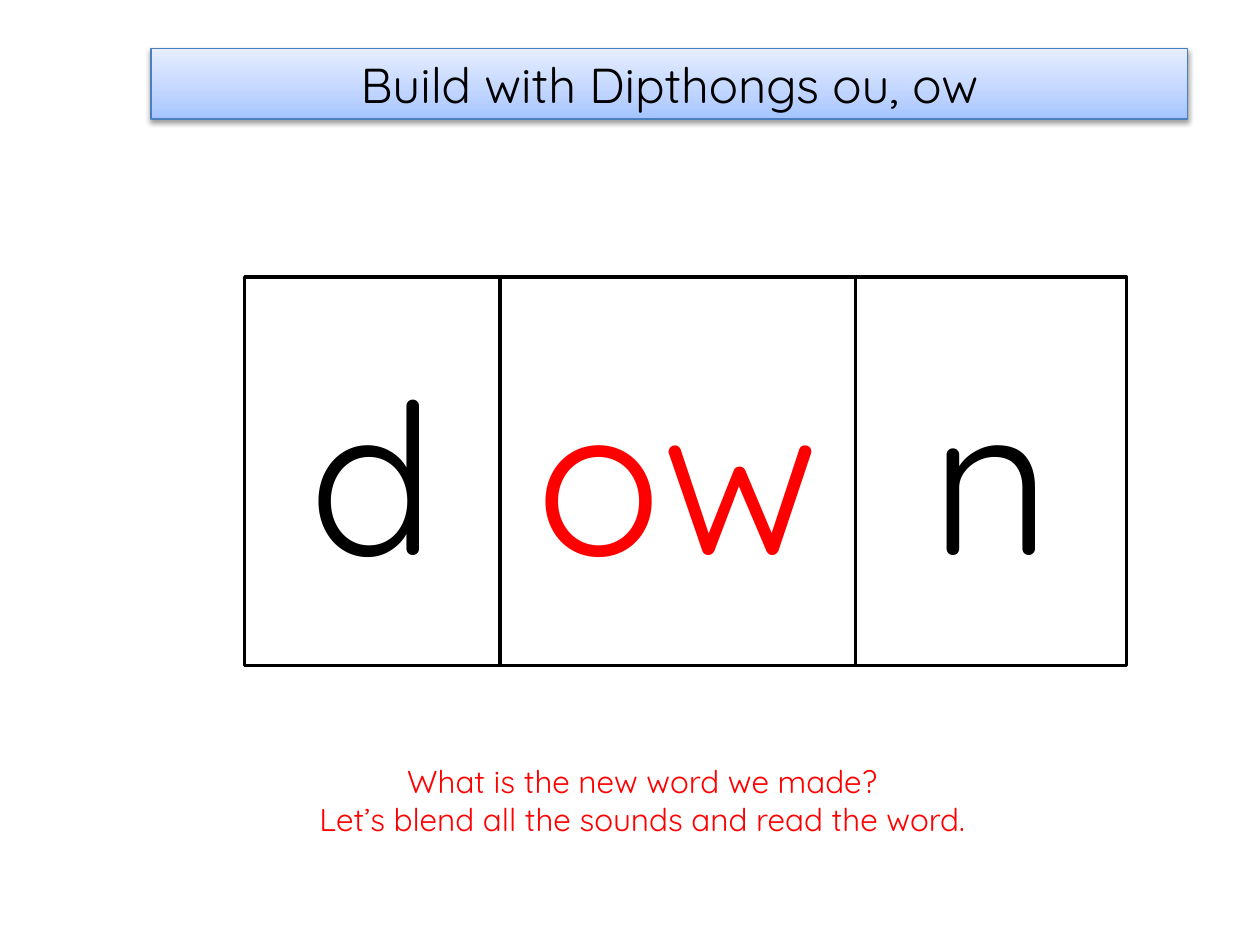
"""Build a word-blending slide with sound boxes."""
from lxml import etree
from pptx import Presentation
from pptx.dml.color import RGBColor
from pptx.enum import shapes, text
from pptx.oxml import ns
from pptx.util import Pt

THEME = {
    "font": "Quicksand", "ink": "000000", "key": "FF0000", "paper": "FFFFFF",
    "edge": "4B7EBC", "fade": [(0, "A4C4FF"), (35, "BFD4FF"), (100, "E6EEFF")],
    "title": 28, "sound": 120, "ask": 18,
}
TITLE = "Build with Dipthongs ou, ow"
SOUNDS = [("d", 146, "ink"), ("ow", 203, "key"), ("n", 155, "ink")]
ASK = ["What is the new word we made?",
       "Let’s blend all the sounds and read the word."]
LEFT, TOP, HIGH = 139.8, 158.4, 221.8


def color(name):
    return RGBColor.from_string(THEME[name])


def write(shape, lines, size, ink, anchor):
    frame = shape.text_frame
    frame.word_wrap = True
    frame.vertical_anchor = anchor
    frame.text = "\n".join(lines)
    look = {"name": THEME["font"], "size": Pt(THEME[size])}
    for para in frame.paragraphs:
        para.alignment = text.PP_ALIGN.CENTER
        for key, value in look.items():
            setattr(para.font, key, value)
        para.font.color.rgb = color(ink)


def box(slide, area, line, width):
    shape = slide.shapes.add_shape(
        shapes.MSO_SHAPE.RECTANGLE, *map(Pt, area))
    shape.shadow.inherit = False
    shape.fill.solid()
    shape.fill.fore_color.rgb = color("paper")
    shape.line.color.rgb = color(line)
    shape.line.width = Pt(width)
    return shape


def add(parent, tag, **attrs):
    return etree.SubElement(parent, ns.qn(tag), attrs)


def shade(shape):
    shape.fill.gradient()
    shape.fill.gradient_angle = 90
    props = shape.element.spPr
    stops = props.find(".//" + ns.qn("a:gsLst"))
    for old in list(stops):
        stops.remove(old)
    for spot, tone in THEME["fade"]:
        stop = add(stops, "a:gs", pos=str(spot * 1000))
        add(stop, "a:srgbClr", val=tone)
    cast = add(props.find(ns.qn("a:effectLst")), "a:outerShdw",
               blurRad=str(Pt(3.1)), dist=str(Pt(1.6)),
               dir="5400000", rotWithShape="0")
    tone = add(cast, "a:srgbClr", val=THEME["ink"])
    add(tone, "a:alpha", val="38000")


def main():
    deck = Presentation()
    deck.slide_width, deck.slide_height = Pt(720), Pt(540)
    slide = deck.slides.add_slide(deck.slide_layouts[6])
    middle = text.MSO_ANCHOR.MIDDLE

    head = box(slide, (86.3, 27.9, 592.5, 40.2), "edge", 0.75)
    shade(head)
    write(head, [TITLE], "title", "ink", middle)

    left = LEFT
    for sound, width, ink in SOUNDS:
        card = box(slide, (left, TOP, width, HIGH), "ink", 2)
        write(card, [sound], "sound", ink, middle)
        left += width

    note = slide.shapes.add_textbox(*map(Pt, (116, 432, 502, 51)))
    write(note, ASK, "ask", "key", text.MSO_ANCHOR.TOP)
    note.text_frame.auto_size = text.MSO_AUTO_SIZE.SHAPE_TO_FIT_TEXT
    deck.save("out.pptx")


if __name__ == "__main__":
    main()
